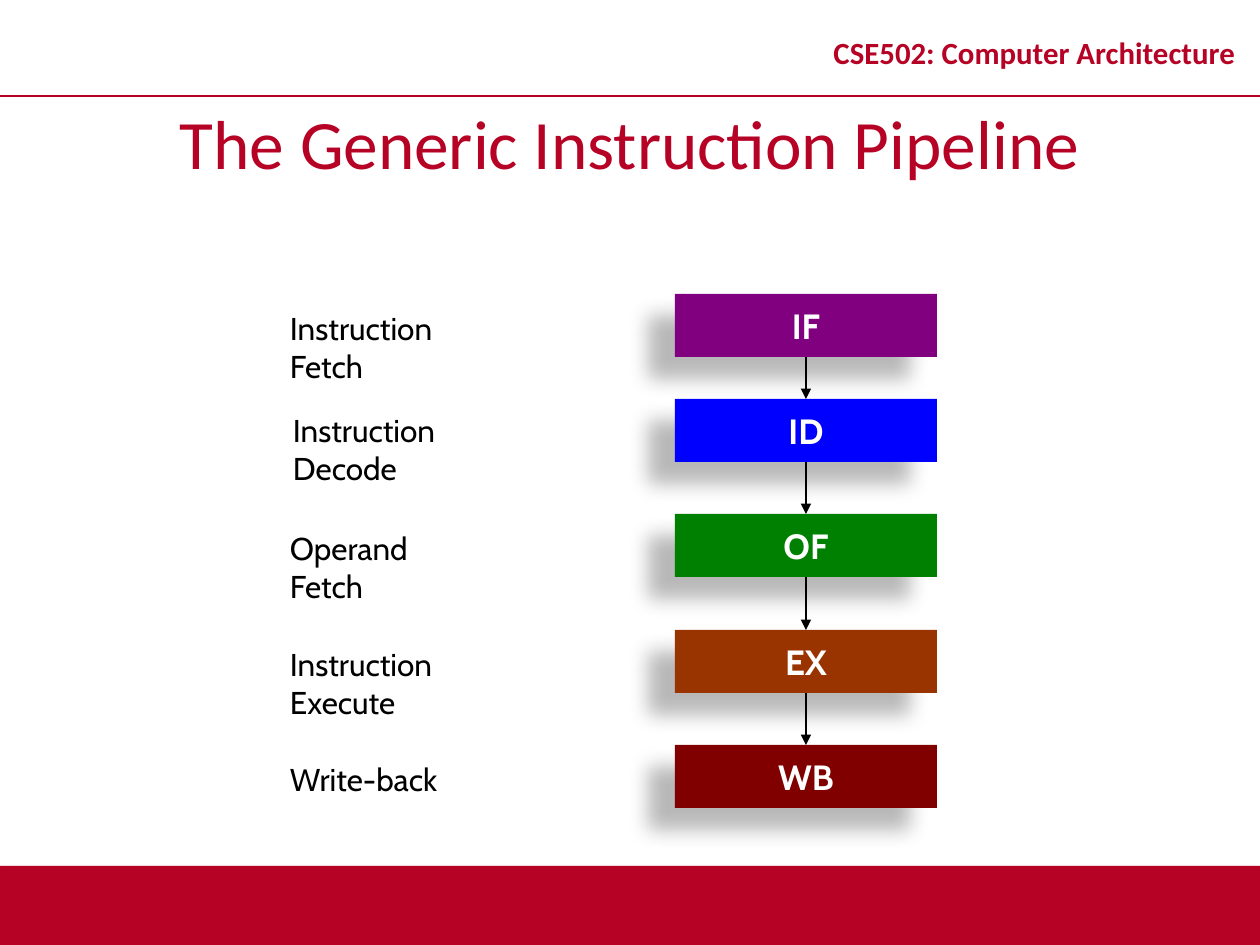
import pptx
import pptx.util
import pptx.dml.color
import pptx.enum.shapes
import pptx.enum.text
import pptx.oxml
import pptx.oxml.ns
from dataclasses import dataclass
from lxml import etree


@dataclass(frozen=True)
class Theme:
    heading_font: str = "Calibri"
    body_font: str = "Cabin"
    red: str = "B60225"
    black: str = "000000"
    white: str = "FFFFFF"
    title_size: float = 39.6
    course_size: float = 17.6
    label_size: float = 18
    stage_size: float = 20


THEME = Theme()
WIDTH, HEIGHT = 1260, 945
COURSE = "CSE502: Computer Architecture"
TITLE = "The Generic Instruction Pipeline"
HEADER_LINE_Y = 96
FOOTER_TOP = 866
STAGES = [
    ("IF", "800080", 294, "Instruction Fetch", (290, 309, 219)),
    ("ID", "0000FF", 399, "Instruction Decode", (293, 411, 251)),
    ("OF", "008000", 514, "Operand Fetch", (290, 529, 194)),
    ("EX", "993300", 630, "Instruction Execute", (290, 645, 250)),
    ("WB", "800000", 745, "Write-back", (290, 760, 150)),
]
STAGE_LEFT, STAGE_WIDTH, STAGE_HEIGHT = 675, 262, 63
LABEL_HEIGHT = 38
FOOTER_SHADOW = dict(alpha=35, blur=3.1, distance=1.8, angle=90)
STAGE_SHADOW = dict(alpha=28, blur=11.8, distance=19.7, angle=141)

ALIGN = pptx.enum.text.PP_ALIGN
ANCHOR = pptx.enum.text.MSO_ANCHOR


def px(value):
    return pptx.util.Emu(round(value * 914400 / 126))


def rgb(value):
    return pptx.dml.color.RGBColor.from_string(value)


def add_effects(parent, tag, **attributes):
    element = etree.SubElement(parent, pptx.oxml.ns.qn(tag))
    for name, value in attributes.items():
        element.set(name, str(value))
    return element


def write(shape, text, font, size, color, bold=False, align=ALIGN.CENTER, anchor=ANCHOR.MIDDLE):
    frame = shape.text_frame
    frame.vertical_anchor = anchor
    frame.word_wrap = True
    paragraph = frame.paragraphs[0]
    paragraph.text = text
    paragraph.alignment = align
    paragraph.font.name = font
    paragraph.font.size = pptx.util.Pt(size)
    paragraph.font.bold = bold
    paragraph.font.color.rgb = rgb(color)
    return frame


def add_text(slide, box, *style, **options):
    shape = slide.shapes.add_textbox(*map(px, box))
    return write(shape, *style, **options)


def add_block(slide, box, fill, alpha, blur, distance, angle):
    kind = pptx.enum.shapes.MSO_SHAPE.RECTANGLE
    shape = slide.shapes.add_shape(kind, *map(px, box))
    shape.fill.solid()
    shape.fill.fore_color.rgb = rgb(fill)
    shape.line.fill.background()
    shape.shadow.inherit = False
    effects = shape._element.spPr.find(pptx.oxml.ns.qn("a:effectLst"))
    shadow = add_effects(effects, "a:outerShdw", blurRad=pptx.util.Pt(blur),
                         dist=pptx.util.Pt(distance), dir=angle * 60000,
                         algn="ctr", rotWithShape=0)
    color = add_effects(shadow, "a:srgbClr", val=THEME.black)
    add_effects(color, "a:alpha", val=alpha * 1000)
    return shape


def add_line(slide, ends, color, width, arrow=False):
    kind = pptx.enum.shapes.MSO_CONNECTOR.STRAIGHT
    connector = slide.shapes.add_connector(kind, *map(px, ends))
    connector.line.color.rgb = rgb(color)
    connector.line.width = pptx.util.Pt(width)
    if arrow:
        add_effects(connector.line._get_or_add_ln(), "a:tailEnd", type="triangle")
    add_effects(connector._element.spPr, "a:effectLst")


def add_frame(slide):
    add_block(slide, (0, FOOTER_TOP, WIDTH, HEIGHT - FOOTER_TOP), THEME.red, **FOOTER_SHADOW)
    add_line(slide, (0, HEADER_LINE_Y, WIDTH, HEADER_LINE_Y), THEME.red, 1)
    course = add_text(slide, (809, 16, 451, 80), COURSE, THEME.heading_font,
                      THEME.course_size, THEME.red, bold=True)
    course.paragraphs[0].line_spacing = 0.8
    add_text(slide, (87, 93, 1086, 97), TITLE, THEME.heading_font,
             THEME.title_size, THEME.red)


def add_pipeline(slide):
    for name, fill, top, label, (label_left, label_top, label_width) in STAGES:
        frame = add_text(slide, (label_left, label_top, label_width, LABEL_HEIGHT), label,
                         THEME.body_font, THEME.label_size, THEME.black,
                         align=ALIGN.LEFT, anchor=ANCHOR.TOP)
        frame.margin_left = frame.margin_right = frame.margin_top = frame.margin_bottom = 0
        block = add_block(slide, (STAGE_LEFT, top, STAGE_WIDTH, STAGE_HEIGHT), fill,
                          **STAGE_SHADOW)
        write(block, name, THEME.body_font, THEME.stage_size, THEME.white, bold=True)
    center = STAGE_LEFT + STAGE_WIDTH / 2
    tops = [stage[2] for stage in STAGES]
    for top, next_top in zip(tops, tops[1:]):
        add_line(slide, (center, top + STAGE_HEIGHT, center, next_top), THEME.black, 0.75,
                 arrow=True)


def main():
    presentation = pptx.Presentation()
    presentation.slide_width = px(WIDTH)
    presentation.slide_height = px(HEIGHT)
    slide = presentation.slides.add_slide(presentation.slide_layouts[6])
    add_frame(slide)
    add_pipeline(slide)
    presentation.save("out.pptx")


if __name__ == "__main__":
    main()
